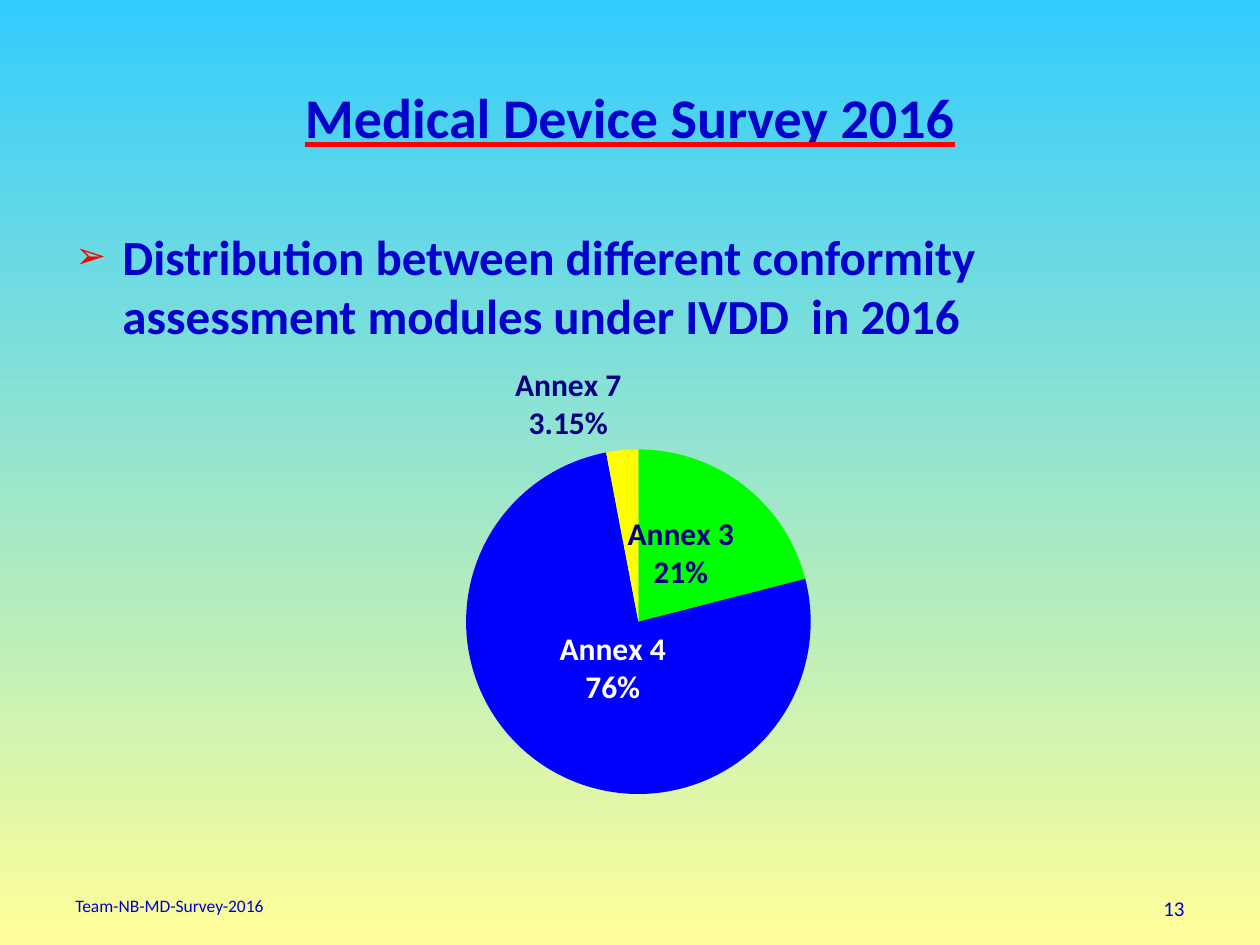
from lxml import etree
from pptx import Presentation
from pptx.chart.data import CategoryChartData
from pptx.dml.color import RGBColor
from pptx.enum.chart import XL_CHART_TYPE, XL_LABEL_POSITION
from pptx.enum.text import MSO_ANCHOR, PP_ALIGN
from pptx.oxml import parse_xml
from pptx.oxml.ns import nsdecls, qn
from pptx.util import Cm, Pt

PIE = XL_CHART_TYPE.PIE
CENTER, OUTSIDE = XL_LABEL_POSITION.CENTER, XL_LABEL_POSITION.OUTSIDE_END
TOP, MIDDLE = MSO_ANCHOR.TOP, MSO_ANCHOR.MIDDLE
LEFT, MIDDLE_ALIGN, RIGHT = PP_ALIGN.LEFT, PP_ALIGN.CENTER, PP_ALIGN.RIGHT
BLUE = "0000CC"


def color(value):
    return RGBColor.from_string(value)


def add_text(text, left, top, width, height, size, bold, align, anchor):
    frame = slide.shapes.add_textbox(Cm(left), Cm(top), Cm(width), Cm(height)).text_frame
    frame.word_wrap = True
    frame.vertical_anchor = anchor
    paragraph = frame.paragraphs[0]
    paragraph.text = text
    paragraph.alignment = align
    font = paragraph.runs[0].font
    font.size = Pt(size)
    font.bold = bold
    font.color.rgb = color(BLUE)
    font.name = "Calibri"
    return paragraph


prs = Presentation()
prs.slide_width, prs.slide_height = Cm(25.4), Cm(19.05)
slide = prs.slides.add_slide(prs.slide_layouts[6])

sky = slide.background.fill
sky.gradient()
sky.gradient_angle = 270
for stop, value in zip(sky.gradient_stops, ("33CCFF", "FFFF99")):
    stop.color.rgb = color(value)

title = add_text("Medical Device Survey 2016", 1.27, 0.76, 22.86, 3.18, 32, True, MIDDLE_ALIGN, MIDDLE)
title_font = title.runs[0].font
title_font.underline = True
title.runs[0]._r.rPr.find(qn("a:latin")).addprevious(parse_xml(
    f'<a:uFill {nsdecls("a")}><a:solidFill><a:srgbClr val="FF0000"/></a:solidFill></a:uFill>'))

add_text("13", 18.21, 17.93, 5.92, 0.74, 12, False, RIGHT, TOP)

subject = add_text("Distribution between\u00a0different conformity assessment modules under IVDD  in 2016",
                   1.27, 4.45, 22.86, 2.08, 28, True, LEFT, TOP)
indent = subject._p.get_or_add_pPr()
indent.set("marL", str(Cm(0.95)))
indent.set("indent", str(-Cm(0.95)))
bullet_color = etree.SubElement(indent, qn("a:buClr"))
etree.SubElement(bullet_color, qn("a:srgbClr"), val="FF0000")
etree.SubElement(indent, qn("a:buSzPct"), val="75000")
etree.SubElement(indent, qn("a:buFont"), typeface="Arial")
etree.SubElement(indent, qn("a:buChar"), char="➢")

add_text("Team-NB-MD-Survey-2016", 1.27, 17.92, 8.05, 0.74, 10, False, LEFT, TOP)

modules = [
    ("Annex 3", 21, "00FF00", "000080", "0%", CENTER, -0.01, 0),
    ("Annex 4", 76, "0000FF", "FFFFFF", "0%", CENTER, 0.02, -0.05),
    ("Annex 7", 3, "FFFF00", "000080", '"3.15%"', OUTSIDE, 0, 0),
]
shares = CategoryChartData()
shares.categories = [module[0] for module in modules]
shares.add_series("Series 1", [module[1] for module in modules])
chart = slide.shapes.add_chart(PIE, Cm(2.47), Cm(7.03), Cm(20.8), Cm(10.69), shares).chart
chart.has_legend = False
chart.has_title = False
chart.font.size = Pt(10)
chart.font.name = "Arial"
chart.font.color.rgb = color("000000")
pie = chart.plots[0]
pie.vary_by_categories = True

plot_area = chart._chartSpace.chart.plotArea
for layout in plot_area.findall(qn("c:layout")):
    plot_area.remove(layout)
plot_area.insert(0, parse_xml(
    f'<c:layout {nsdecls("c")}><c:manualLayout><c:layoutTarget val="inner"/>'
    '<c:xMode val="edge"/><c:yMode val="edge"/><c:x val="0.33"/><c:y val="0.19"/>'
    '<c:w val="0.34"/><c:h val="0.65"/></c:manualLayout></c:layout>'))

for index, (name, share, fill, ink, pattern, place, dx, dy) in enumerate(modules):
    point = pie.series[0].points[index]
    point.format.fill.solid()
    point.format.fill.fore_color.rgb = color(fill)
    point.format.line.fill.background()
    label = point.data_label
    label.font.size = Pt(18)
    label.font.bold = True
    label.font.name = "Calibri"
    label.font.color.rgb = color(ink)
    label.position = place
    node = label._get_or_add_dLbl()
    for part, shown in (("showVal", "0"), ("showCatName", "1"), ("showPercent", "1")):
        node.find(qn(f"c:{part}")).set("val", shown)
    etree.SubElement(node, qn("c:separator")).text = "\n"
    number_format = parse_xml(f'<c:numFmt {nsdecls("c")} formatCode="" sourceLinked="0"/>')
    number_format.set("formatCode", pattern)
    node.find(qn("c:idx")).addnext(number_format)
    if dx or dy:
        node.find(qn("c:idx")).addnext(parse_xml(
            f'<c:layout {nsdecls("c")}><c:manualLayout><c:x val="{dx}"/><c:y val="{dy}"/>'
            '</c:manualLayout></c:layout>'))

prs.save("out.pptx")
